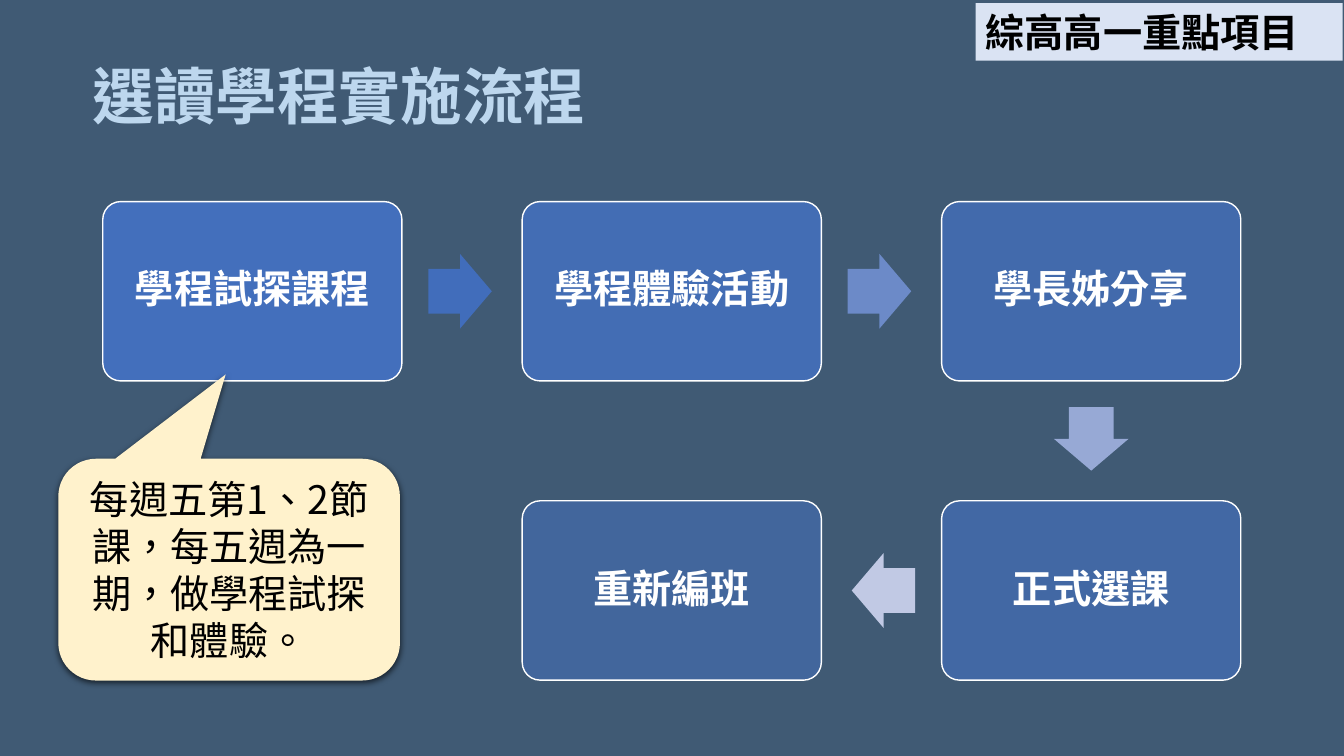
from lxml.etree import SubElement
from pptx import Presentation
from pptx.dml.color import RGBColor
from pptx.enum.lang import MSO_LANGUAGE_ID
from pptx.enum.shapes import MSO_SHAPE
from pptx.enum.text import MSO_ANCHOR, PP_ALIGN
from pptx.oxml.ns import qn
from pptx.util import Cm, Pt

SANS_TC = "Noto Sans CJK TC"
SANS_SC = "Noto Sans CJK SC"


def paint(shape, color, alpha=None, outline=None):
    shape.shadow.inherit = False
    shape.fill.solid()
    shape.fill.fore_color.rgb = RGBColor.from_string(color)
    if alpha is not None:
        fill_color = shape.fill._xPr.find(qn("a:solidFill"))[0]
        SubElement(fill_color, qn("a:alpha"), val=str(alpha * 1000))
    if outline:
        shape.line.color.rgb = RGBColor.from_string(outline)
        shape.line.width = Pt(1)
    else:
        shape.line.fill.background()


def write(shape, text, size=28, color="000000", font=SANS_TC, bold=False,
          align=PP_ALIGN.CENTER, anchor=MSO_ANCHOR.MIDDLE, spacing=None):
    frame = shape.text_frame
    frame.word_wrap = True
    frame.vertical_anchor = anchor
    para = frame.paragraphs[0]
    para.alignment = align
    para.line_spacing = spacing
    span = para.add_run()
    span.text = text
    span.font.size = Pt(size)
    span.font.bold = bold
    span.font.color.rgb = RGBColor.from_string(color)
    span.font.name = font
    span.font.language_id = MSO_LANGUAGE_ID.TRADITIONAL_CHINESE
    SubElement(span.font._element, qn("a:ea"), typeface=font)


deck = Presentation()
deck.slide_width, deck.slide_height = Cm(33.87), Cm(19.05)
page = deck.slides.add_slide(deck.slide_layouts[5])
page.background.fill.solid()
page.background.fill.fore_color.rgb = RGBColor.from_string("405A74")

# Title
title = page.shapes.title
title.left, title.top, title.width, title.height = Cm(2.08), Cm(1.32), Cm(29.21), Cm(2.39)
write(title, "選讀學程實施流程", size=44, color="BDD7EE", font=SANS_SC, bold=True,
      align=PP_ALIGN.LEFT, spacing=0.9)

# Steps on a grid: text, column, row, opacity
steps = [
    ("學程試探課程", 0, 0, 90),
    ("學程體驗活動", 1, 0, 80),
    ("學長姊分享", 2, 0, 70),
    ("正式選課", 2, 1, 60),
    ("重新編班", 1, 1, 50),
]
card_width, card_height = 7.54, 4.52
centers = []
for text, column, row, alpha in steps:
    left, top = 2.59 + 10.57 * column, 5.08 + 7.54 * row
    card = page.shapes.add_shape(MSO_SHAPE.ROUNDED_RECTANGLE, Cm(left), Cm(top),
                                 Cm(card_width), Cm(card_height))
    card.adjustments[0] = 0.1
    paint(card, "4472C4", alpha=alpha, outline="FFFFFF")
    write(card, text, color="FFFFFF", bold=True, spacing=0.9)
    frame = card.text_frame
    frame.margin_left = frame.margin_right = Cm(0.3)
    frame.margin_top = frame.margin_bottom = Cm(0.3)
    centers.append((left + card_width / 2, top + card_height / 2))

# Block arrows midway between successive steps, set slightly back
arrow_width, arrow_height, setback = 1.6, 1.88, 0.05
directions = {0: (1, 0), 90: (0, 1), 180: (-1, 0)}
arrows = [("416DBB", 0), ("6C8AC8", 0), ("97A9D5", 90), ("C1C9E4", 180)]
for (color, angle), start, end in zip(arrows, centers, centers[1:]):
    across, down = directions[angle]
    middle_x = (start[0] + end[0]) / 2 - setback * across
    middle_y = (start[1] + end[1]) / 2 - setback * down
    arrow = page.shapes.add_shape(MSO_SHAPE.RIGHT_ARROW,
                                  Cm(middle_x - arrow_width / 2), Cm(middle_y - arrow_height / 2),
                                  Cm(arrow_width), Cm(arrow_height))
    arrow.adjustments[0], arrow.adjustments[1] = 0.6, 0.5
    arrow.rotation = angle
    paint(arrow, color)

# Callout for the first step, with a soft shadow
callout = page.shapes.add_shape(MSO_SHAPE.ROUNDED_RECTANGULAR_CALLOUT,
                                Cm(1.47), Cm(11.56), Cm(8.61), Cm(5.59))
for index, value in enumerate((-0.01, -0.88, 0.17)):
    callout.adjustments[index] = value
paint(callout, "FFF2CC")
write(callout, "每週五第1、2節課，每五週為一期，做學程試探和體驗。")
effects = callout._element.spPr.find(qn("a:effectLst"))
shadow = SubElement(effects, qn("a:outerShdw"), blurRad=str(Pt(4.5)), dist=str(Pt(1.5)),
                    dir="5400000", algn="ctr", rotWithShape="0")
shadow_color = SubElement(shadow, qn("a:srgbClr"), val="000000")
SubElement(shadow_color, qn("a:alpha"), val="63000")

# Corner label
label = page.shapes.add_textbox(Cm(24.59), Cm(0.08), Cm(9.25), Cm(1.45))
paint(label, "DAE3F3")
write(label, "綜高高一重點項目", font=SANS_SC, bold=True,
      align=PP_ALIGN.LEFT, anchor=MSO_ANCHOR.TOP)

deck.save("out.pptx")
